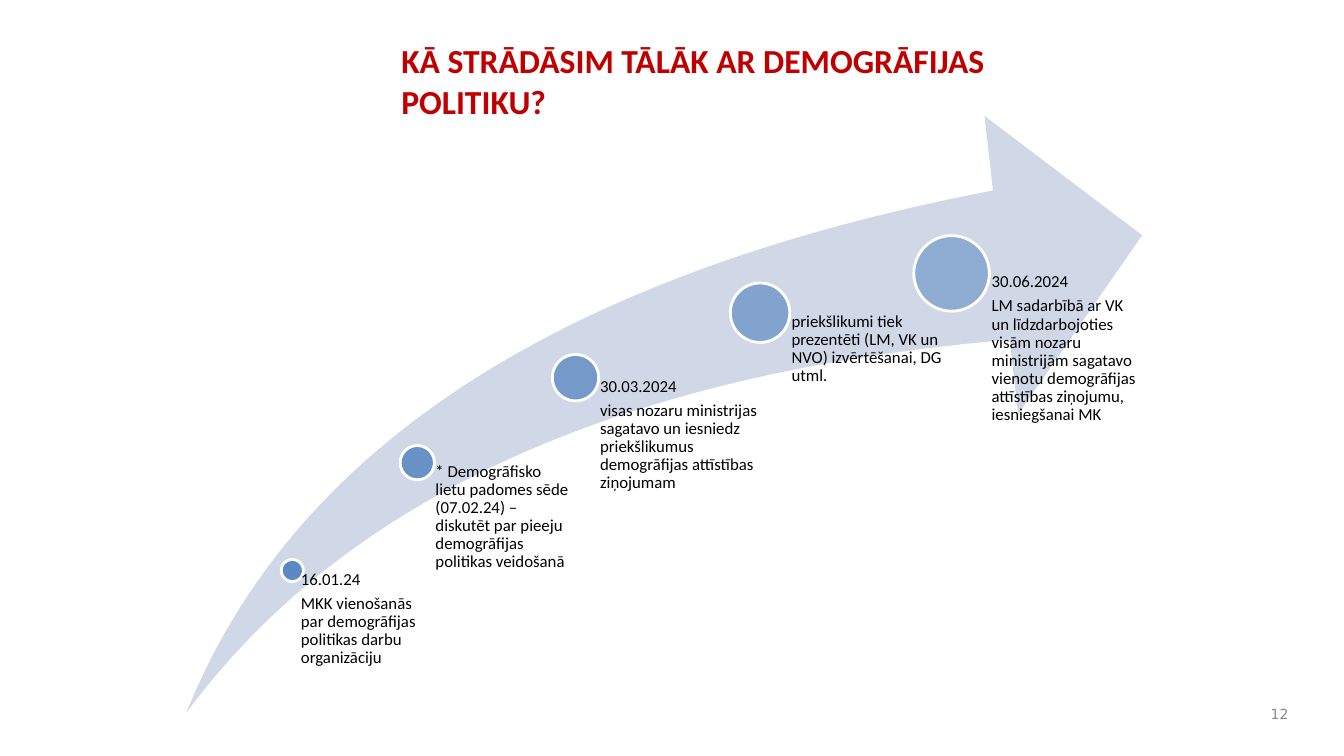
from lxml.etree import SubElement
from pptx import Presentation
from pptx.dml.color import RGBColor
from pptx.enum.shapes import MSO_SHAPE
from pptx.enum.text import MSO_ANCHOR, PP_ALIGN
from pptx.oxml.ns import qn
from pptx.util import Pt

COLORS = {"title": "C00000", "swoosh": "D0D8E8", "dot": "4F81BD",
          "ring": "FFFFFF", "text": "000000", "number": "898989"}
TITLE = {"name": "Calibri", "size": Pt(24), "bold": True}
BODY = {"name": "Calibri", "size": Pt(12)}
NUMBER = {"name": "DejaVu Sans", "size": Pt(10)}

# centre x, centre y, diameter, text x, text width, paragraphs
STEPS = [
    (75.6, 324.7, 15.8, 73.4, 92.9,
     ["16.01.24", "MKK vienošanās par demogrāfijas politikas darbu organizāciju"]),
    (164.9, 247.7, 24.5, 164.9, 113,
     ["* Demogrāfisko lietu padomes sēde (07.02.24) – diskutēt par pieeju "
      "demogrāfijas politikas veidošanā"]),
    (277.9, 187, 33.1, 277.9, 131.8,
     ["30.03.2024", "visas nozaru ministrijas sagatavo un iesniedz priekšlikumus "
      "demogrāfijas attīstības ziņojumam"]),
    (409.7, 140.6, 42.5, 409.7, 136.8,
     ["priekšlikumi tiek prezentēti (LM, VK un NVO) izvērtēšanai, DG utml."]),
    (546.5, 112.5, 54, 546.5, 136.8,
     ["30.06.2024", "LM sadarbībā ar VK un līdzdarbojoties visām nozaru ministrijām "
      "sagatavo vienotu demogrāfijas attīstības ziņojumu, iesniegšanai MK"]),
]


def set_text(sp, lines, font, color, insets, para=None, anchor=MSO_ANCHOR.TOP):
    """Fill a shape with formatted paragraphs."""
    tf = sp.text_frame
    tf.word_wrap = True
    tf.vertical_anchor = anchor
    for side, inset in zip(("left", "top", "right", "bottom"), insets):
        setattr(tf, f"margin_{side}", Pt(inset))
    for i, line in enumerate(lines):
        p = tf.paragraphs[0] if i == 0 else tf.add_paragraph()
        for key, value in (para or {}).items():
            setattr(p, key, value)
        r = p.add_run()
        r.text = line
        for key, value in font.items():
            setattr(r.font, key, value)
        r.font.color.rgb = RGBColor.from_string(COLORS[color])


def add_filled(s, kind, box, color):
    """Add a flat preset shape without an outline."""
    sp = s.shapes.add_shape(kind, *map(Pt, box))
    sp.shadow.inherit = False
    sp.fill.solid()
    sp.fill.fore_color.rgb = RGBColor.from_string(COLORS[color])
    sp.line.fill.background()
    return sp


def add_title(s, box):
    """Place the slide heading."""
    sp = s.shapes.title
    for key, value in zip(("left", "top", "width", "height"), box):
        setattr(sp, key, Pt(value))
    set_text(sp, ["KĀ STRĀDĀSIM TĀLĀK AR DEMOGRĀFIJAS POLITIKU?"], TITLE, "title",
             (7.2, 3.6, 7.2, 3.6), {"alignment": PP_ALIGN.LEFT})


def add_timeline(s, box):
    """Draw the swoosh arrow with its dots and step texts."""
    left, top, _, height = box
    swoosh = add_filled(s, MSO_SHAPE.SWOOSH_ARROW, box, "swoosh")
    swoosh.adjustments[0] = swoosh.adjustments[1] = 0.25
    for i, (x, y, size, text_x, text_w, lines) in enumerate(STEPS):
        dot = add_filled(s, MSO_SHAPE.OVAL,
                         (left + x - size / 2, top + y - size / 2, size, size), "dot")
        fill = dot.fill.fore_color._xFill.find(qn("a:srgbClr"))
        SubElement(fill, qn("a:alpha"), val=str(90000 - 10000 * i))
        dot.line.color.rgb = RGBColor.from_string(COLORS["ring"])
        dot.line.width = Pt(2)
        tb = s.shapes.add_textbox(Pt(left + text_x), Pt(top + y), Pt(text_w), Pt(height - y))
        set_text(tb, lines, BODY, "text", (0.53 * size, 0, 0, 0),
                 {"line_spacing": 0.9, "space_after": Pt(4.2)})


def add_page_number(s, box):
    """Place the page number."""
    tb = s.shapes.add_textbox(*map(Pt, box))
    set_text(tb, ["12"], NUMBER, "number", (7.2, 3.6, 7.2, 3.6),
             {"alignment": PP_ALIGN.RIGHT}, MSO_ANCHOR.MIDDLE)


def main():
    """Build and save the slide."""
    prs = Presentation()
    prs.slide_width, prs.slide_height = Pt(960), Pt(540)
    s = prs.slides.add_slide(prs.slide_layouts[5])
    add_timeline(s, (133.2, 82.8, 682.6, 426.2))
    add_title(s, (279.4, 25.2, 480.2, 81.4))
    add_page_number(s, (895.7, 498.2, 31.7, 23.8))
    prs.save("out.pptx")


if __name__ == "__main__":
    main()
